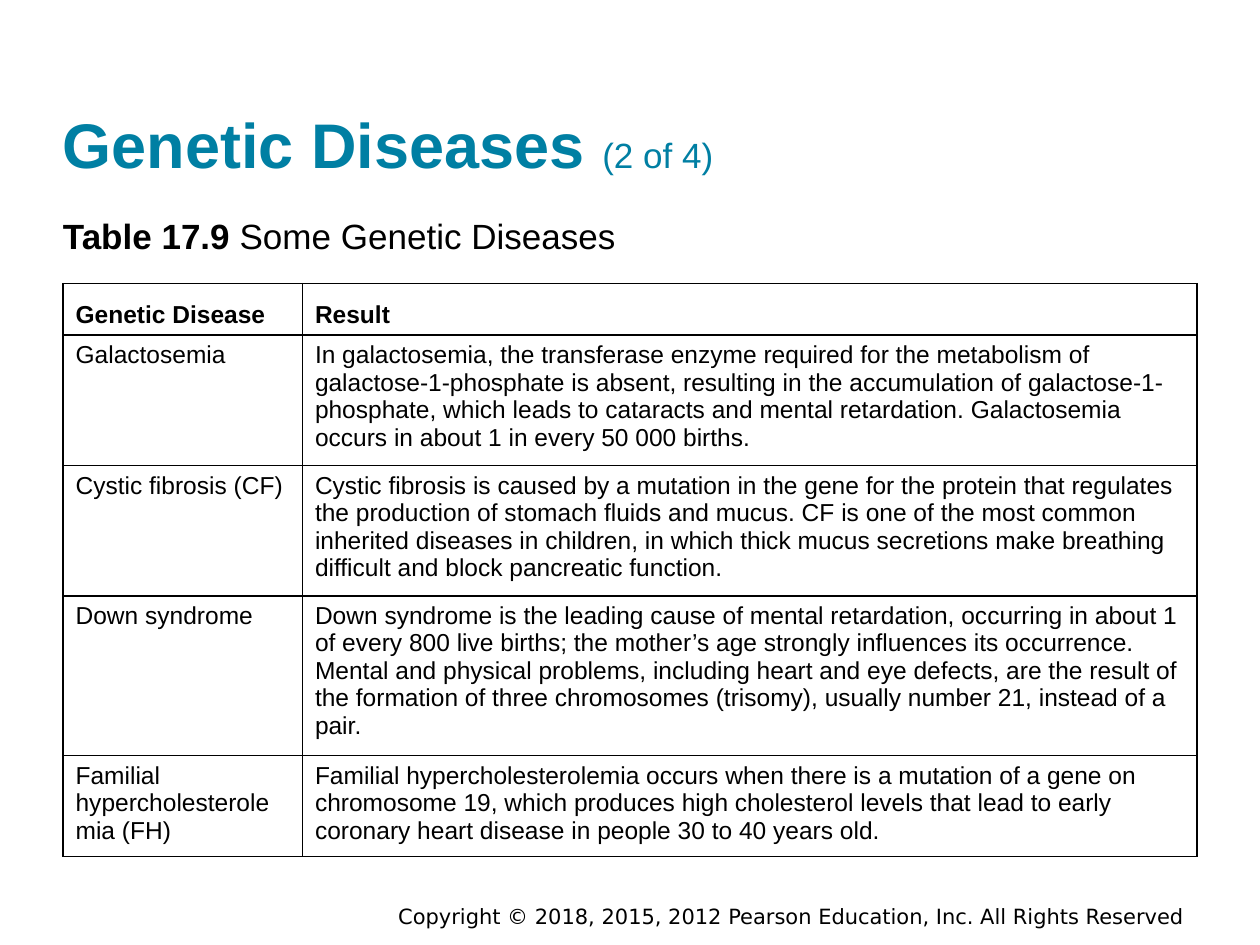
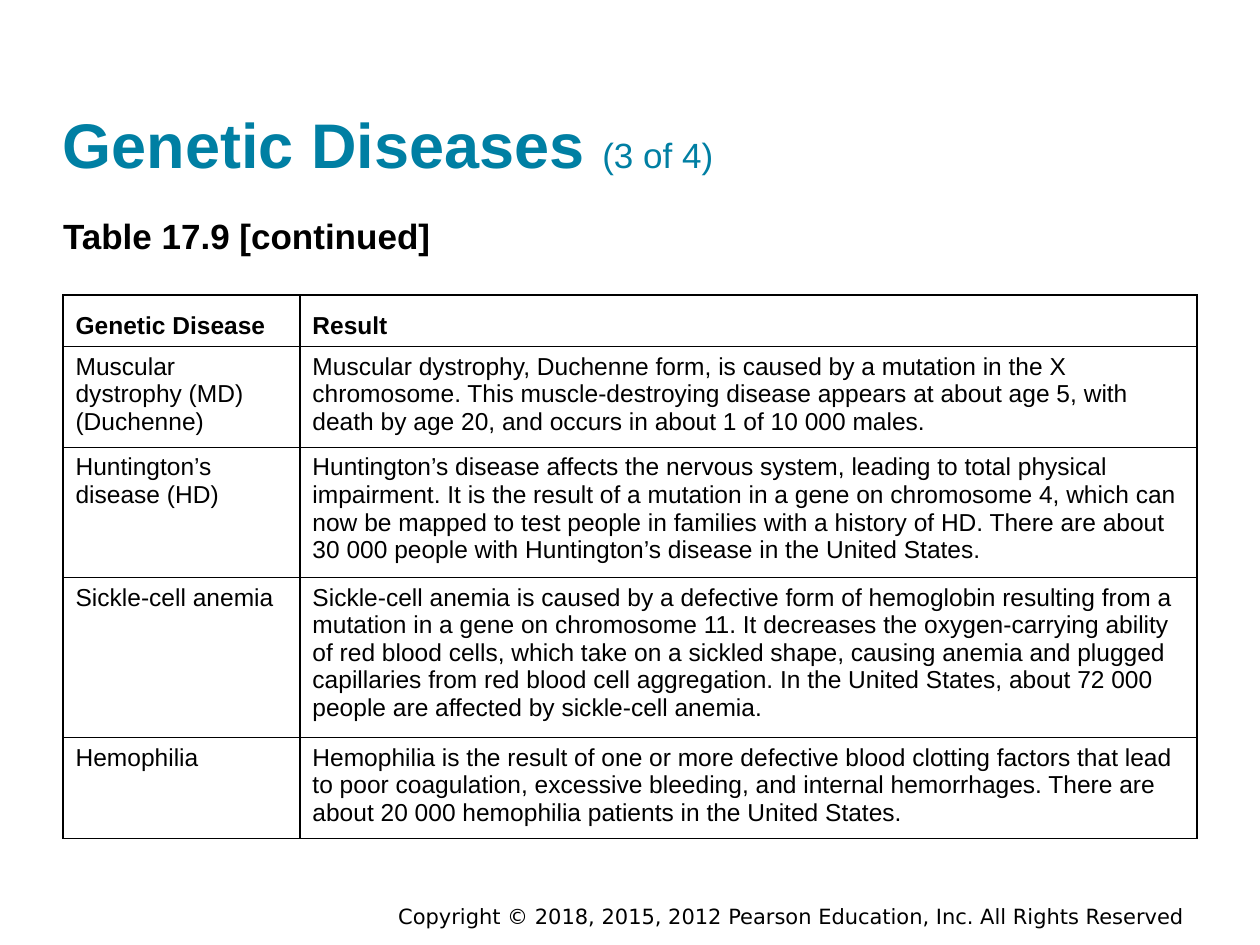
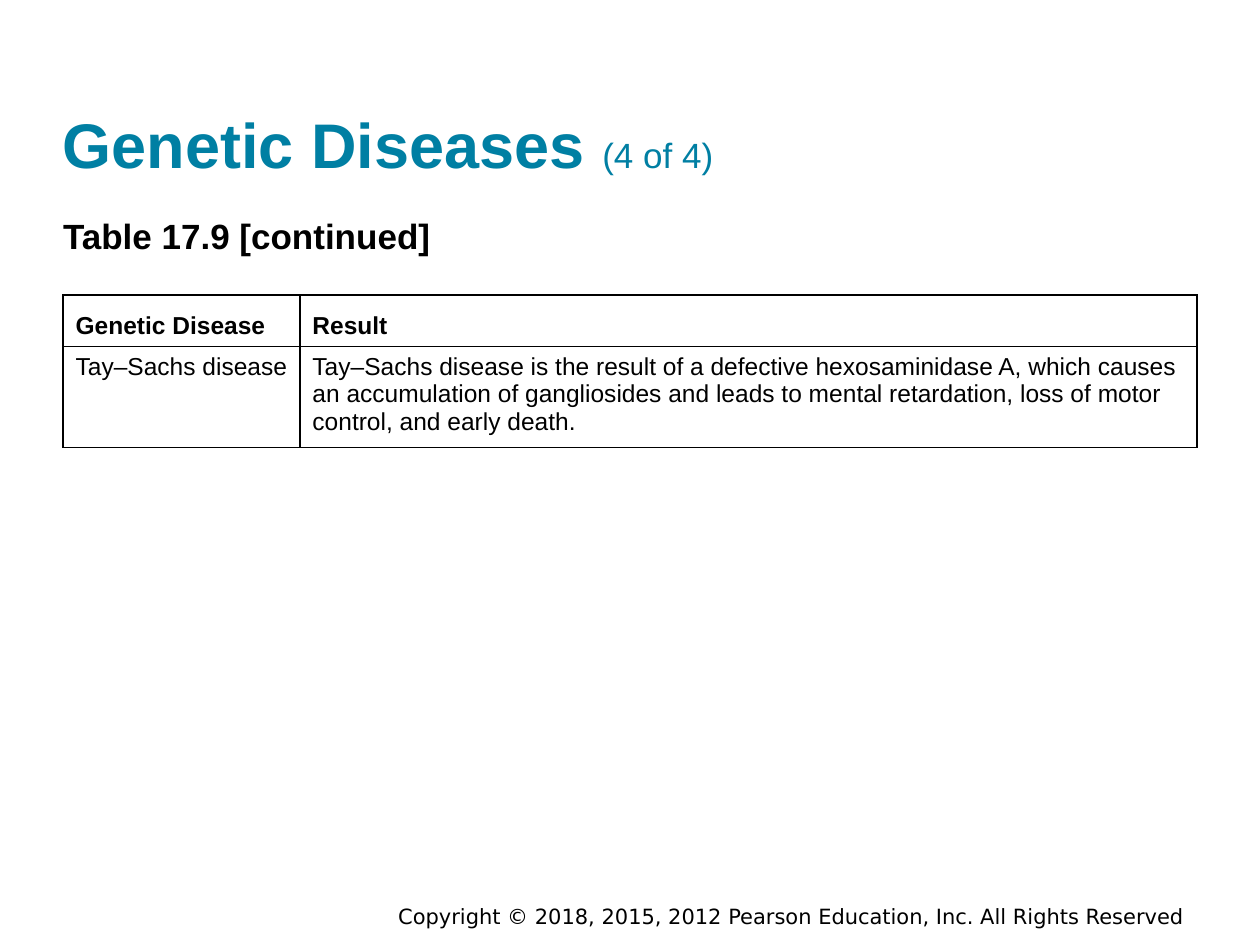
from dataclasses import dataclass

from lxml.etree import SubElement
from pptx import Presentation
from pptx.dml.color import RGBColor
from pptx.enum.text import MSO_ANCHOR as Anchor, PP_ALIGN as Align
from pptx.oxml.ns import qn
from pptx.slide import Slide
from pptx.table import _Cell as Cell
from pptx.text.text import TextFrame, _Paragraph as Paragraph
from pptx.util import Inches, Pt

TEAL = "007FA3"
BLACK = "000000"
FONT = "Arial"
FOOTER_FONT = "DejaVu Sans"
MARGIN = 0.5
CONTENT_WIDTH = 9
ROW_HEIGHT = 0.41
BORDER_WIDTH = Pt(1)
FOOTER = "Copyright © 2018, 2015, 2012 Pearson Education, Inc. All Rights Reserved"
HEADINGS = ("Genetic Disease", "Result")


@dataclass(frozen=True)
class Span:
    text: str
    size: float
    bold: bool = False
    color: str = BLACK
    font: str = FONT


@dataclass(frozen=True)
class Disease:
    name: str
    result: str


@dataclass(frozen=True)
class DiseasePage:
    number: int
    caption: tuple[Span, ...]
    caption_width: float
    table_top: float
    name_width: float
    diseases: tuple[Disease, ...]


CONTINUED = (Span("Table 17.9 [continued]", 20, bold=True),)

PAGES = (
    DiseasePage(
        2,
        (Span("Table 17.9", 20, bold=True), Span(" Some Genetic Diseases", 20)),
        9, 2.25, 1.9,
        (
            Disease(
                "Galactosemia",
                "In galactosemia, the transferase enzyme required for the metabolism of "
                "galactose-1-phosphate is absent, resulting in the accumulation of "
                "galactose-1-phosphate, which leads to cataracts and mental retardation. "
                "Galactosemia occurs in about 1 in every 50 000 births.",
            ),
            Disease(
                "Cystic fibrosis (CF)",
                "Cystic fibrosis is caused by a mutation in the gene for the protein that "
                "regulates the production of stomach fluids and mucus. CF is one of the "
                "most common inherited diseases in children, in which thick mucus "
                "secretions make breathing difficult and block pancreatic function.",
            ),
            Disease(
                "Down syndrome",
                "Down syndrome is the leading cause of mental retardation, occurring in "
                "about 1 of every 800 live births; the mother’s age strongly influences "
                "its occurrence. Mental and physical problems, including heart and eye "
                "defects, are the result of the formation of three chromosomes (trisomy), "
                "usually number 21, instead of a pair.",
            ),
            Disease(
                "Familial hypercholesterolemia (FH)",
                "Familial hypercholesterolemia occurs when there is a mutation of a gene "
                "on chromosome 19, which produces high cholesterol levels that lead to "
                "early coronary heart disease in people 30 to 40 years old.",
            ),
        ),
    ),
    DiseasePage(
        3, CONTINUED, 3.32, 2.34, 1.88,
        (
            Disease(
                "Muscular dystrophy (MD) (Duchenne)",
                "Muscular dystrophy, Duchenne form, is caused by a mutation in the X "
                "chromosome. This muscle-destroying disease appears at about age 5, with "
                "death by age 20, and occurs in about 1 of 10 000 males.",
            ),
            Disease(
                "Huntington’s disease (HD)",
                "Huntington’s disease affects the nervous system, leading to total "
                "physical impairment. It is the result of a mutation in a gene on "
                "chromosome 4, which can now be mapped to test people in families with a "
                "history of HD. There are about 30 000 people with Huntington’s disease "
                "in the United States.",
            ),
            Disease(
                "Sickle-cell anemia",
                "Sickle-cell anemia is caused by a defective form of hemoglobin resulting "
                "from a mutation in a gene on chromosome 11. It decreases the "
                "oxygen-carrying ability of red blood cells, which take on a sickled "
                "shape, causing anemia and plugged capillaries from red blood cell "
                "aggregation. In the United States, about 72 000 people are affected by "
                "sickle-cell anemia.",
            ),
            Disease(
                "Hemophilia",
                "Hemophilia is the result of one or more defective blood clotting factors "
                "that lead to poor coagulation, excessive bleeding, and internal "
                "hemorrhages. There are about 20 000 hemophilia patients in the United "
                "States.",
            ),
        ),
    ),
    DiseasePage(
        4, CONTINUED, 3.32, 2.34, 1.88,
        (
            Disease(
                "Tay–Sachs disease",
                "Tay–Sachs disease is the result of a defective hexosaminidase A, which "
                "causes an accumulation of gangliosides and leads to mental retardation, "
                "loss of motor control, and early death.",
            ),
        ),
    ),
)


def add_spans(para: Paragraph, *spans: Span) -> None:
    for span in spans:
        run = para.add_run()
        run.text = span.text
        run.font.name = span.font
        run.font.size = Pt(span.size)
        run.font.bold = span.bold
        run.font.color.rgb = RGBColor.from_string(span.color)


def add_text(slide: Slide, left: float, top: float, width: float, height: float,
             *spans: Span, anchor: Anchor = Anchor.TOP) -> TextFrame:
    """Add a wrapping one-paragraph text box without insets."""
    box = slide.shapes.add_textbox(
        Inches(left), Inches(top), Inches(width), Inches(height))
    frame = box.text_frame
    frame.word_wrap = True
    frame.vertical_anchor = anchor
    frame.margin_left = frame.margin_right = 0
    frame.margin_top = frame.margin_bottom = 0
    add_spans(frame.paragraphs[0], *spans)
    return frame


def add_footer(slide: Slide) -> None:
    frame = add_text(slide, 2.9, 7.04, 6.6, 0.46,
                     Span(FOOTER, 12, font=FOOTER_FONT), anchor=Anchor.MIDDLE)
    frame.margin_left = frame.margin_right = Inches(0.1)
    frame.paragraphs[0].alignment = Align.RIGHT


def add_borders(cell: Cell) -> None:
    """Line all four sides; the lines must come before the cell's fill."""
    properties = cell._tc.get_or_add_tcPr()
    for position, side in enumerate(("lnL", "lnR", "lnT", "lnB")):
        line = SubElement(properties, qn(f"a:{side}"), w=str(BORDER_WIDTH))
        fill = SubElement(line, qn("a:solidFill"))
        SubElement(fill, qn("a:srgbClr"), val=BLACK)
        properties.insert(position, line)


def add_disease_table(slide: Slide, page: DiseasePage) -> None:
    rows = [HEADINGS, *((disease.name, disease.result) for disease in page.diseases)]
    table = slide.shapes.add_table(
        len(rows), len(HEADINGS), Inches(MARGIN), Inches(page.table_top),
        Inches(CONTENT_WIDTH), Inches(ROW_HEIGHT * len(rows))).table
    table.horz_banding = False
    table.columns[0].width = Inches(page.name_width)
    table.columns[1].width = Inches(CONTENT_WIDTH - page.name_width)
    for row_index, texts in enumerate(rows):
        heading = row_index == 0
        for column_index, text in enumerate(texts):
            cell = table.cell(row_index, column_index)
            cell.fill.background()
            add_borders(cell)
            cell.vertical_anchor = Anchor.BOTTOM if heading else Anchor.TOP
            add_spans(cell.text_frame.paragraphs[0], Span(text, 14, bold=heading))


def main() -> None:
    deck = Presentation()
    deck.slide_width, deck.slide_height = Inches(10), Inches(7.5)
    blank = deck.slide_layouts[6]
    for page in PAGES:
        slide = deck.slides.add_slide(blank)
        add_footer(slide)
        add_text(slide, MARGIN, 0.24, CONTENT_WIDTH, 1.2,
                 Span("Genetic Diseases ", 36, bold=True, color=TEAL),
                 Span(f"({page.number} of 4)", 20, color=TEAL),
                 anchor=Anchor.BOTTOM)
        add_text(slide, MARGIN, 1.7, page.caption_width, 0.45, *page.caption)
        add_disease_table(slide, page)
    deck.save("out.pptx")


if __name__ == "__main__":
    main()
